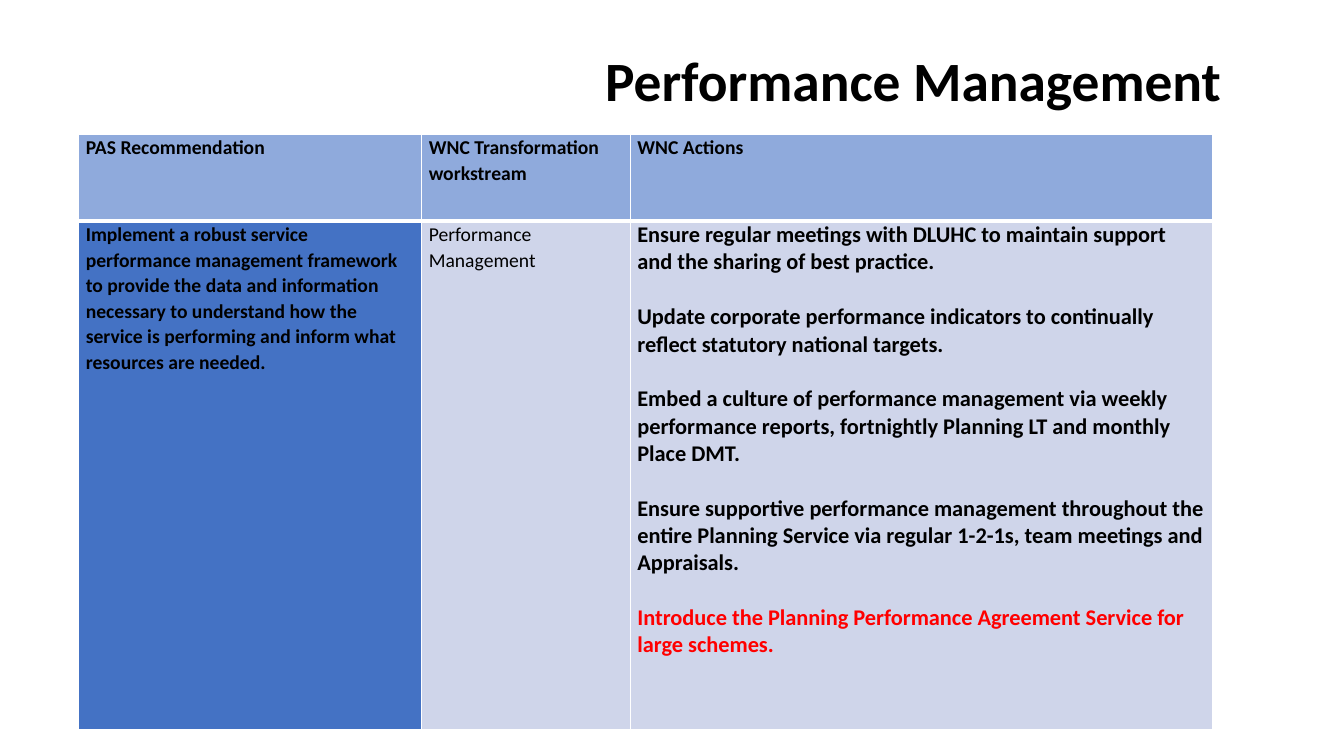
from lxml import etree
from pptx import Presentation
from pptx.dml.color import RGBColor
from pptx.enum.text import MSO_ANCHOR, MSO_AUTO_SIZE, PP_ALIGN
from pptx.oxml.ns import qn
from pptx.util import Pt

LEFT = PP_ALIGN.LEFT
MIDDLE = MSO_ANCHOR.MIDDLE
TOP = MSO_ANCHOR.TOP
NO_AUTOFIT = MSO_AUTO_SIZE.NONE

FONT = "Calibri"
BLACK, WHITE, RED = "000000", "FFFFFF", "FF0000"
HEADER_BLUE, STRONG_BLUE, PALE_BLUE = "8FAADC", "4472C4", "CFD5EA"

HEADINGS = ["PAS Recommendation", "WNC Transformation workstream", "WNC Actions"]
RECOMMENDATION = (
    "Implement a robust service performance management framework to provide "
    "the data and information necessary to understand how the service is "
    "performing and inform what resources are needed."
)
WORKSTREAM = "Performance Management"
ACTIONS = [
    "Ensure regular meetings with DLUHC to maintain support and the sharing of best practice.",
    "Update corporate performance indicators to continually reflect statutory national targets.",
    "Embed a culture of performance management via weekly performance reports, "
    "fortnightly Planning LT and monthly Place DMT.",
    "Ensure supportive performance management throughout the entire Planning Service "
    "via regular 1-2-1s, team meetings and Appraisals.",
    "Introduce the Planning Performance Agreement Service for large schemes.",
]


def rgb(hex_colour):
    return RGBColor.from_string(hex_colour)


def write_paragraph(paragraph, text, size, bold=True, colour=BLACK, spacing=1.0, after=0):
    paragraph.text = text
    paragraph.alignment = LEFT
    paragraph.line_spacing = spacing
    paragraph.space_before = Pt(0)
    paragraph.space_after = Pt(after)
    font = paragraph.runs[0].font
    font.name, font.size, font.bold = FONT, Pt(size), bold
    font.color.rgb = rgb(colour)


def set_borders(cell, top, bottom):
    """White rules: 1 pt at the sides, given widths above and below."""
    properties = cell._tc.get_or_add_tcPr()
    for tag, width in (("a:lnL", 1), ("a:lnR", 1), ("a:lnT", top), ("a:lnB", bottom)):
        line = etree.SubElement(properties, qn(tag), w=str(Pt(width)))
        fill = etree.SubElement(line, qn("a:solidFill"))
        etree.SubElement(fill, qn("a:srgbClr"), val=WHITE)


def style_cell(cell, fill, top, bottom):
    set_borders(cell, top, bottom)
    cell.fill.solid()
    cell.fill.fore_color.rgb = rgb(fill)
    cell.margin_left = cell.margin_right = Pt(5)
    cell.margin_top = cell.margin_bottom = Pt(0)
    cell.vertical_anchor = TOP


def add_title(slide, left, top, width, height):
    title = slide.shapes.title
    title.left, title.top, title.width, title.height = map(Pt, (left, top, width, height))
    frame = title.text_frame
    frame.auto_size = NO_AUTOFIT
    frame.vertical_anchor = MIDDLE
    frame.text = "Performance Management"
    write_paragraph(frame.paragraphs[0], frame.text, 39.6, spacing=0.9)


def add_action_table(slide, left, top, column_widths, row_heights):
    box = map(Pt, (left, top, sum(column_widths), sum(row_heights)))
    table = slide.shapes.add_table(len(row_heights), len(column_widths), *box).table
    for column, width in zip(table.columns, column_widths):
        column.width = Pt(width)
    for row, height in zip(table.rows, row_heights):
        row.height = Pt(height)

    # Header row
    for column, heading in enumerate(HEADINGS):
        cell = table.cell(0, column)
        style_cell(cell, HEADER_BLUE, top=1, bottom=3)
        write_paragraph(cell.text_frame.paragraphs[0], heading, 14, spacing=1.07, after=8)

    # Recommendation and workstream
    for column, fill in enumerate((STRONG_BLUE, PALE_BLUE, PALE_BLUE)):
        style_cell(table.cell(1, column), fill, top=3, bottom=1)
    for column, (text, bold) in enumerate(((RECOMMENDATION, True), (WORKSTREAM, False))):
        paragraph = table.cell(1, column).text_frame.paragraphs[0]
        write_paragraph(paragraph, text, 14, bold, spacing=1.07, after=8)

    # Actions, the last one highlighted
    frame = table.cell(1, 2).text_frame
    frame.text = "\n".join(ACTIONS)
    for paragraph in frame.paragraphs:
        colour = RED if paragraph.text == ACTIONS[-1] else BLACK
        write_paragraph(paragraph, paragraph.text, 16, colour=colour, after=19.5)


def main():
    presentation = Presentation()
    presentation.slide_width, presentation.slide_height = Pt(960), Pt(540)
    title_only = presentation.slide_layouts[5]
    slide = presentation.slides.add_slide(title_only)
    add_title(slide, 425, 29, 469, 62)
    add_action_table(slide, 56.3, 96, (245, 149, 416), (62, 363))
    presentation.save("out.pptx")


if __name__ == "__main__":
    main()
